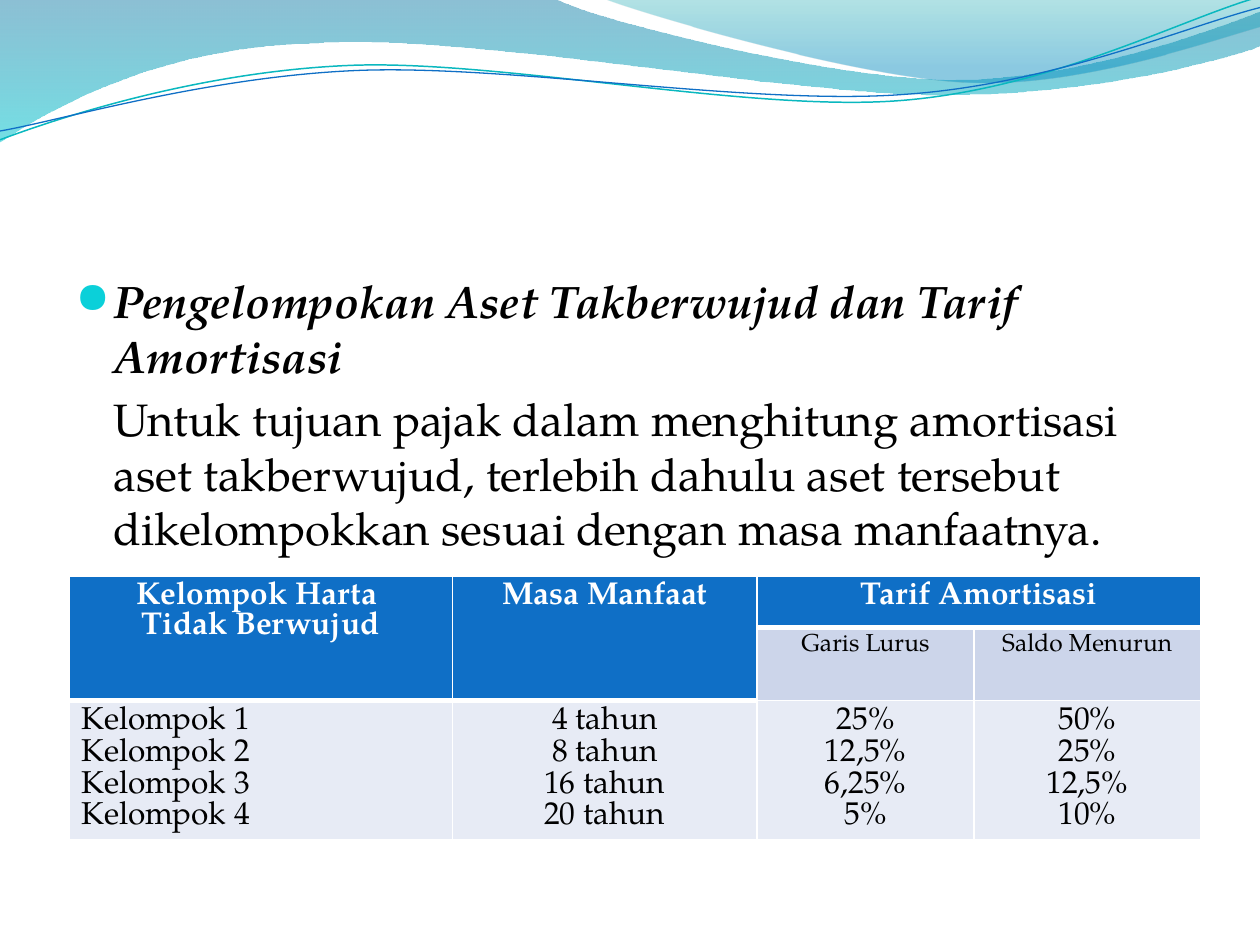
"""Build the slide on grouping intangible assets and their amortisation rates."""
import pptx
import pptx.dml.color
import pptx.enum.text
import pptx.oxml
import pptx.oxml.ns
import pptx.util

Inches = pptx.util.Inches
Pt = pptx.util.Pt
RGBColor = pptx.dml.color.RGBColor
PP_ALIGN = pptx.enum.text.PP_ALIGN
qn = pptx.oxml.ns.qn
NS = pptx.oxml.ns.nsdecls("a")

FONT = "TeX Gyre Pagella"
BULLET_FONT = "OpenSymbol"
BLACK = RGBColor(0x00, 0x00, 0x00)
WHITE = RGBColor(0xFF, 0xFF, 0xFF)
BLUE = RGBColor(0x0F, 0x6F, 0xC6)
TEAL = RGBColor(0x0A, 0xB8, 0xBF)
CYAN = RGBColor(0x0B, 0xD0, 0xD9)
SUBHEAD = RGBColor(0xCC, 0xD5, 0xEA)
BAND = RGBColor(0xE7, 0xEB, 0xF5)
DEEP_BLUE = RGBColor(0x00, 0x74, 0xA1)
AQUA = RGBColor(0x00, 0xC6, 0xCF)
SEA_GREEN = RGBColor(0x00, 0xA1, 0xA9)
SKY_BLUE = RGBColor(0x00, 0x8B, 0xBF)

BACK_WAVE = [
    [(0, 0)],
    [(4.4, -0.01)],
    [(4.76, 0.17), (6.64, 0.63), (7.58, 0.63)],
    [(8.53, 0.63), (9.58, 0.26), (10, 0.09)],
    [(10.01, 0.36)],
    [(9.83, 0.44), (8.7, 0.76), (7.46, 0.75)],
    [(6.22, 0.75), (3.82, 0.28), (2.57, 0.34)],
    [(1.29, 0.36), (0.46, 0.83), (-0.01, 1.13)],
]
FRONT_WAVE = [
    [(4.79, -0.01)],
    [(5.09, 0.11), (6.82, 0.62), (7.69, 0.65)],
    [(8.56, 0.69), (9.61, 0.32), (10, 0.21)],
    [(10, 0)],
]
TEAL_CURVE = [
    [(0, 1.11)],
    [(0.48, 0.93), (1.58, 0.57), (2.77, 0.52)],
    [(3.95, 0.47), (5.93, 0.89), (7.13, 0.8)],
    [(8.33, 0.71), (9.38, 0.15), (9.98, -0.02)],
]
BLUE_CURVE = [
    [(0, 1.04)],
    [(0.47, 0.96), (1.64, 0.61), (2.83, 0.56)],
    [(4.03, 0.51), (5.97, 0.84), (7.17, 0.75)],
    [(8.36, 0.67), (9.41, 0.21), (10, 0.06)],
]

HEADING = "Pengelompokan Aset Takberwujud dan Tarif Amortisasi"
EXPLANATION = ("\tUntuk tujuan pajak dalam menghitung amortisasi aset takberwujud, "
               "terlebih dahulu aset tersebut dikelompokkan sesuai dengan masa manfaatnya.")
HEADERS = ["Kelompok Harta \nTidak Berwujud", "Masa Manfaat", "Tarif Amortisasi"]
SUBHEADERS = ["Garis Lurus", "Saldo Menurun"]
COLUMNS = [
    ["Kelompok 1", "Kelompok 2", "Kelompok 3", "Kelompok 4"],
    ["4 tahun", "8 tahun", "16 tahun", "20 tahun"],
    ["25%", "12,5%", "6,25%", "5%"],
    ["50%", "25%", "12,5%", "10%"],
]


class Deck:
    """Hold the style and the current slide."""

    def __init__(self):
        """Start a presentation with one slide."""
        self.prs = pptx.Presentation()
        self.prs.slide_width = Inches(10)
        self.prs.slide_height = Inches(7.5)
        self.s = self.prs.slides.add_slide(self.prs.slide_layouts[1])
        title = self.s.shapes.title._element
        title.getparent().remove(title)

    def style(self, p, size, color, bold=False, italic=False):
        """Format every run of a paragraph."""
        for r in p.runs:
            r.font.name = FONT
            r.font.size = Pt(size)
            r.font.bold = bold
            r.font.italic = italic
            r.font.color.rgb = color

    def outline(self, segments, close):
        """Draw a freeform whose three-point segments are cubic curves."""
        ends = [(Inches(x), Inches(y)) for x, y in (seg[-1] for seg in segments)]
        builder = self.s.shapes.build_freeform(*ends[0], scale=1.0)
        builder.add_line_segments(ends[1:], close=close)
        sp = builder.convert_to_shape()
        sp.shadow.inherit = False
        lines = list(sp._element.spPr.iter(qn("a:lnTo")))
        for line, seg in zip(lines, segments[1:]):
            if len(seg) == 3:
                pts = "".join(f'<a:pt x="{Inches(x) - sp.left}" y="{Inches(y) - sp.top}"/>'
                              for x, y in seg)
                curve = pptx.oxml.parse_xml(f"<a:cubicBezTo {NS}>{pts}</a:cubicBezTo>")
                line.getparent().replace(line, curve)
        return sp

    def wave(self, segments, stops):
        """Draw a filled wave with a transparent vertical gradient."""
        sp = self.outline(segments, True)
        sp.line.fill.background()
        sp.fill.gradient()
        sp.fill.gradient_angle = 270
        for stop, (position, color, _) in zip(sp.fill.gradient_stops, stops):
            stop.position = position
            stop.color.rgb = color
        for clr, (_, _, alpha) in zip(sp._element.spPr.iter(qn("a:srgbClr")), stops):
            clr.append(pptx.oxml.parse_xml(f'<a:alpha {NS} val="{alpha * 1000}"/>'))

    def curve(self, segments, color, width):
        """Draw an open curved line."""
        sp = self.outline(segments, False)
        sp.fill.background()
        sp.line.color.rgb = color
        sp.line.width = Pt(width)

    def body(self, left, top, width, height):
        """Fill the body placeholder."""
        sp = self.s.placeholders[1]
        sp.left, sp.top, sp.width, sp.height = map(Inches, (left, top, width, height))
        tf = sp.text_frame
        tf.auto_size = pptx.enum.text.MSO_AUTO_SIZE.NONE
        tf.text = HEADING
        tf.add_paragraph().text = EXPLANATION
        bullet = [f'<a:buClr {NS}><a:srgbClr val="{CYAN}"/></a:buClr>',
                  f'<a:buSzPct {NS} val="95000"/>',
                  f'<a:buFont {NS} typeface="{BULLET_FONT}"/>',
                  f'<a:buChar {NS} char="●"/>']
        for p, marks, strong in zip(tf.paragraphs, (bullet, [f"<a:buNone {NS}/>"]),
                                    (True, False)):
            p.space_before = Pt(5)
            self.style(p, 26, BLACK, strong, strong)
            pPr = p._p.get_or_add_pPr()
            pPr.set("marL", str(Inches(0.3)))
            pPr.set("indent", str(Inches(-0.3)))
            for mark in marks:
                pPr.append(pptx.oxml.parse_xml(mark))

    def cell(self, cell, text, fill, size=18, color=BLACK, bold=False,
             align=PP_ALIGN.CENTER, spacing=1.0, top=1, bottom=1):
        """Fill and format one table cell."""
        cell.fill.solid()
        cell.fill.fore_color.rgb = fill
        cell.text = text
        for p in cell.text_frame.paragraphs:
            p.alignment = align
            p.line_spacing = spacing
            self.style(p, size, color, bold)
        tcPr = cell._tc.get_or_add_tcPr()
        for i, (side, width) in enumerate(zip("LRTB", (1, 1, top, bottom))):
            tcPr.insert(i, pptx.oxml.parse_xml(
                f'<a:ln{side} {NS} w="{Pt(width)}"><a:solidFill>'
                f'<a:srgbClr val="{WHITE}"/></a:solidFill></a:ln{side}>'))

    def table(self, left, top, widths, heights):
        """Draw the table of groups, useful lives and rates."""
        frame = self.s.shapes.add_table(
            len(heights), len(widths), Inches(left), Inches(top),
            Inches(sum(widths)), Inches(sum(heights)))
        table = frame.table
        for col, width in zip(table.columns, widths):
            col.width = Inches(width)
        for row, height in zip(table.rows, heights):
            row.height = Inches(height)
        for i, text in enumerate(HEADERS + [""]):
            self.cell(table.cell(0, i), text, BLUE, color=WHITE, bold=True,
                      spacing=0.95, bottom=3)
        for i, text in enumerate(["", ""] + SUBHEADERS):
            fill, edges = (BLUE, (1, 3)) if i < 2 else (SUBHEAD, (3, 1))
            self.cell(table.cell(1, i), text, fill, size=14, top=edges[0], bottom=edges[1])
        for i, lines in enumerate(COLUMNS):
            self.cell(table.cell(2, i), "\n".join(lines), BAND, top=3 if i < 2 else 1,
                      align=PP_ALIGN.CENTER if i else PP_ALIGN.LEFT)
        for i in (0, 1):
            table.cell(0, i).merge(table.cell(1, i))
        table.cell(0, 2).merge(table.cell(0, 3))


def main():
    """Build and save the slide."""
    deck = Deck()
    deck.wave(BACK_WAVE, [(0, DEEP_BLUE, 45), (1, AQUA, 55)])
    deck.wave(FRONT_WAVE, [(0, SEA_GREEN, 30), (0.8, SKY_BLUE, 45)])
    deck.curve(TEAL_CURVE, TEAL, 0.85)
    deck.curve(BLUE_CURVE, BLUE, 0.75)
    deck.body(0.5, 2.12, 9, 4.8)
    deck.table(0.55, 4.57, [3.04, 2.42, 1.72, 1.8], [0.41, 0.58, 1.1])
    deck.prs.save("out.pptx")


if __name__ == "__main__":
    main()
